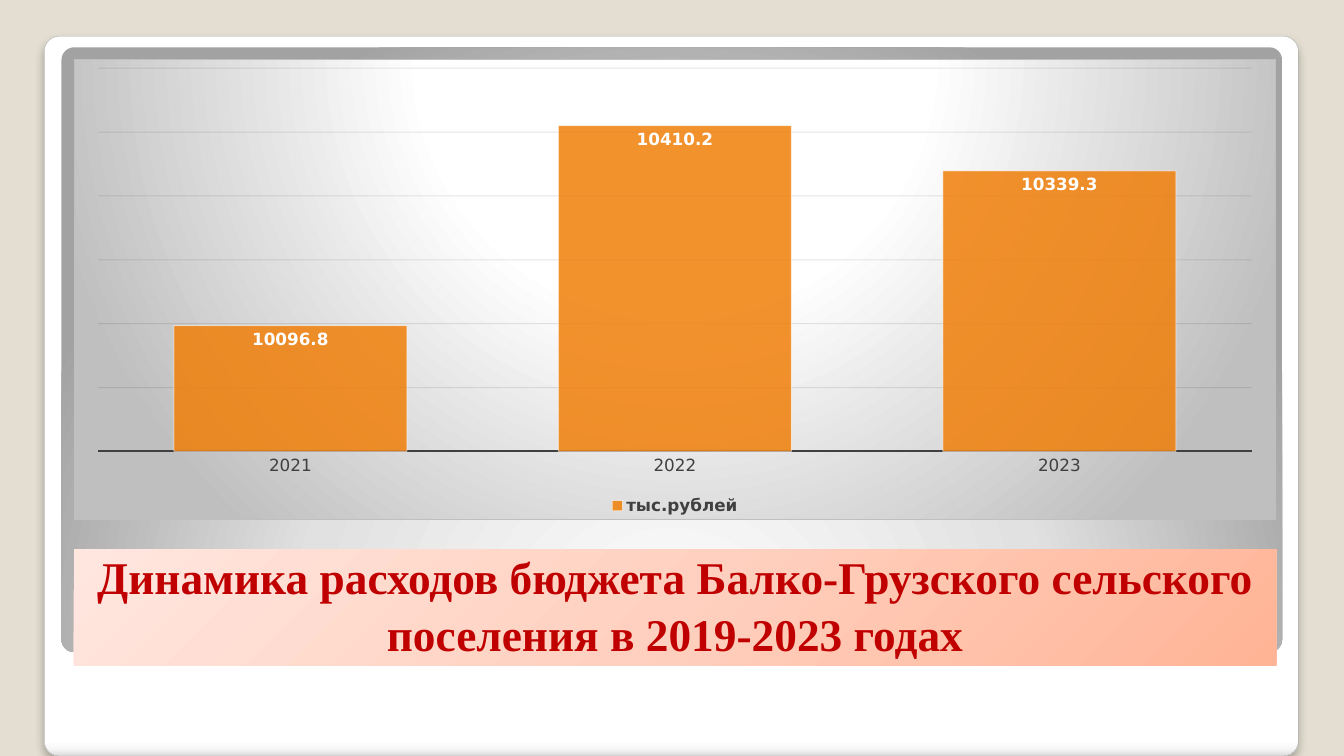
"""Build a budget spending slide: framed panels, a column chart and a title band."""
from dataclasses import dataclass
from typing import Optional

import pptx
import pptx.chart.data
import pptx.dml.color
import pptx.enum.chart
import pptx.enum.shapes
import pptx.enum.text
import pptx.oxml
import pptx.oxml.ns
import pptx.util

Pt = pptx.util.Pt
qn = pptx.oxml.ns.qn
NS = pptx.oxml.ns.nsdecls("a", "c")


@dataclass(frozen=True)
class Theme:
    background: str = "E3DED1"
    title: str = "C00000"
    axis: str = "404040"
    grid: str = "0D0D0D"
    bar: str = "F07F09"
    white: str = "FFFFFF"
    frame: str = "A4A4A4"
    chart_border: str = "BFBFBF"
    title_font: str = "Times New Roman"
    chart_font: str = "DejaVu Sans"
    title_size: float = 32.4
    chart_size: float = 12


@dataclass(frozen=True)
class Gradient:
    stops: tuple[tuple[int, str], ...]
    focus: Optional[tuple[int, int, int, int]] = None
    angle: int = 90


@dataclass(frozen=True)
class Panel:
    left: float
    top: float
    width: float
    height: float
    gradient: Gradient
    corner: float = 0
    line: str = ""
    shadow: bool = False
    text: str = ""


THEME = Theme()
CHART_GRADIENT = Gradient(
    ((0, "FFFFFF"), (39, "FFFFFF"), (100, "BFBFBF")), (50, -80, 50, 180))
PANELS = (
    Panel(31.7, 25.9, 895.7, 514.1,
          Gradient(((0, "FFFFFF"), (98, "FFFFFF"), (99, "F7F7F7"), (100, "DADADA"))),
          corner=0.021, line=THEME.frame, shadow=True),
    Panel(43.9, 33.8, 871.9, 432,
          Gradient(((0, "FFFFFF"), (55, "E1E1E1"), (100, "A2A2A2")), (50, 175, 50, -75)),
          corner=0.021),
    Panel(52.6, 392.4, 859, 82.8,
          Gradient(((0, "FFB496"), (50, "FFD0BF"), (100, "FFE7E0")), (100, 100, 0, 0)),
          text="Динамика расходов бюджета Балко-Грузского сельского поселения в 2019-2023 годах"),
)


def rgb(code: str) -> pptx.dml.color.RGBColor:
    """Turn a hex code into a colour."""
    return pptx.dml.color.RGBColor.from_string(code)


def gradient_xml(gradient: Gradient) -> str:
    """Return the gradient as a gradFill element."""
    stops = "".join(f'<a:gs pos="{pos * 1000}"><a:srgbClr val="{code}"/></a:gs>'
                    for pos, code in gradient.stops)
    if gradient.focus:
        edges = " ".join(f'{side}="{value * 1000}"'
                         for side, value in zip("ltrb", gradient.focus))
        shade = f'<a:path path="circle"><a:fillToRect {edges}/></a:path>'
    else:
        shade = f'<a:lin ang="{gradient.angle * 60000}" scaled="0"/>'
    return f'<a:gradFill {NS} rotWithShape="1"><a:gsLst>{stops}</a:gsLst>{shade}</a:gradFill>'


def set_alpha(fill, percent: int) -> None:
    """Make a solid fill partly transparent."""
    color = fill._xPr.find(qn("a:solidFill"))[0]
    color.append(pptx.oxml.parse_xml(f'<a:alpha {NS} val="{percent * 1000}"/>'))


def style_font(font, color: str, bold: bool) -> None:
    """Give a chart font its face, size and colour."""
    font.name = THEME.chart_font
    font.size = Pt(THEME.chart_size)
    font.bold = bold
    font.color.rgb = rgb(color)


def draw_panel(slide, panel: Panel) -> None:
    """Draw one gradient panel with its optional title."""
    kinds = pptx.enum.shapes.MSO_SHAPE
    s = slide.shapes.add_shape(
        kinds.ROUNDED_RECTANGLE if panel.corner else kinds.RECTANGLE,
        Pt(panel.left), Pt(panel.top), Pt(panel.width), Pt(panel.height))
    if panel.corner:
        s.adjustments[0] = panel.corner
    s.fill.background()
    props = s._element.spPr
    props.replace(props.find(qn("a:noFill")), pptx.oxml.parse_xml(gradient_xml(panel.gradient)))
    if panel.line:
        s.line.color.rgb = rgb(panel.line)
        s.line.width = Pt(0.16)
    else:
        s.line.fill.background()
    s.shadow.inherit = False
    if panel.shadow:
        props.find(qn("a:effectLst")).append(pptx.oxml.parse_xml(
            f'<a:outerShdw {NS} blurRad="{Pt(6)}" dist="{Pt(4)}" dir="5400000" '
            'algn="tl" rotWithShape="0"><a:srgbClr val="000000">'
            '<a:alpha val="25000"/></a:srgbClr></a:outerShdw>'))
    if panel.text:
        tf = s.text_frame
        tf.word_wrap = True
        tf.vertical_anchor = pptx.enum.text.MSO_ANCHOR.BOTTOM
        p = tf.paragraphs[0]
        p.text = panel.text
        p.alignment = pptx.enum.text.PP_ALIGN.CENTER
        p.line_spacing = 1.05
        p.font.name = THEME.title_font
        p.font.size = Pt(THEME.title_size)
        p.font.bold = True
        p.font.color.rgb = rgb(THEME.title)


def draw_chart(slide) -> None:
    """Draw the column chart of yearly spending."""
    data = pptx.chart.data.CategoryChartData(number_format="General")
    data.categories = ["2021", "2022", "2023"]
    data.add_series("тыс.рублей", (10096.8, 10410.2, 10339.3))
    chart = slide.shapes.add_chart(
        pptx.enum.chart.XL_CHART_TYPE.COLUMN_CLUSTERED,
        Pt(52.6), Pt(41.8), Pt(859), Pt(329.8), data).chart
    style_font(chart.font, THEME.axis, False)
    chart.has_title = False
    chart.has_legend = True
    chart.legend.position = pptx.enum.chart.XL_LEGEND_POSITION.BOTTOM
    chart.legend.include_in_layout = False
    style_font(chart.legend.font, THEME.axis, True)

    years = chart.category_axis
    years.major_tick_mark = pptx.enum.chart.XL_TICK_MARK.NONE
    years.format.line.color.rgb = rgb(THEME.axis)
    years.format.line.width = Pt(1.5)
    style_font(years.tick_labels.font, THEME.axis, False)

    values = chart.value_axis
    values.visible = False
    values.minimum_scale, values.maximum_scale, values.major_unit = 9900, 10500, 100
    values.has_major_gridlines = True
    grid = values.major_gridlines.format.line
    grid.color.rgb = rgb(THEME.grid)
    grid.width = Pt(0.75)
    set_alpha(grid.fill, 10)

    plot = chart.plots[0]
    plot.gap_width = 65
    plot.vary_by_categories = False
    series = plot.series[0]
    series.format.fill.solid()
    series.format.fill.fore_color.rgb = rgb(THEME.bar)
    set_alpha(series.format.fill, 85)
    series.format.line.color.rgb = rgb(THEME.white)
    series.format.line.width = Pt(0.75)
    set_alpha(series.format.line.fill, 50)
    labels = series.data_labels
    labels.show_value = True
    labels.position = pptx.enum.chart.XL_LABEL_POSITION.INSIDE_END
    style_font(labels.font, THEME.white, True)

    chart._chartSpace.find(qn("c:chart")).addnext(pptx.oxml.parse_xml(
        f'<c:spPr {NS}>{gradient_xml(CHART_GRADIENT)}<a:ln w="{Pt(0.75)}"><a:solidFill>'
        f'<a:srgbClr val="{THEME.chart_border}"/></a:solidFill></a:ln></c:spPr>'))


def main() -> None:
    """Build and save the slide."""
    prs = pptx.Presentation()
    prs.slide_width, prs.slide_height = Pt(960), Pt(540)
    slide = prs.slides.add_slide(prs.slide_layouts[6])
    slide.background.fill.solid()
    slide.background.fill.fore_color.rgb = rgb(THEME.background)
    for panel in PANELS:
        draw_panel(slide, panel)
    draw_chart(slide)
    prs.save("out.pptx")


if __name__ == "__main__":
    main()
